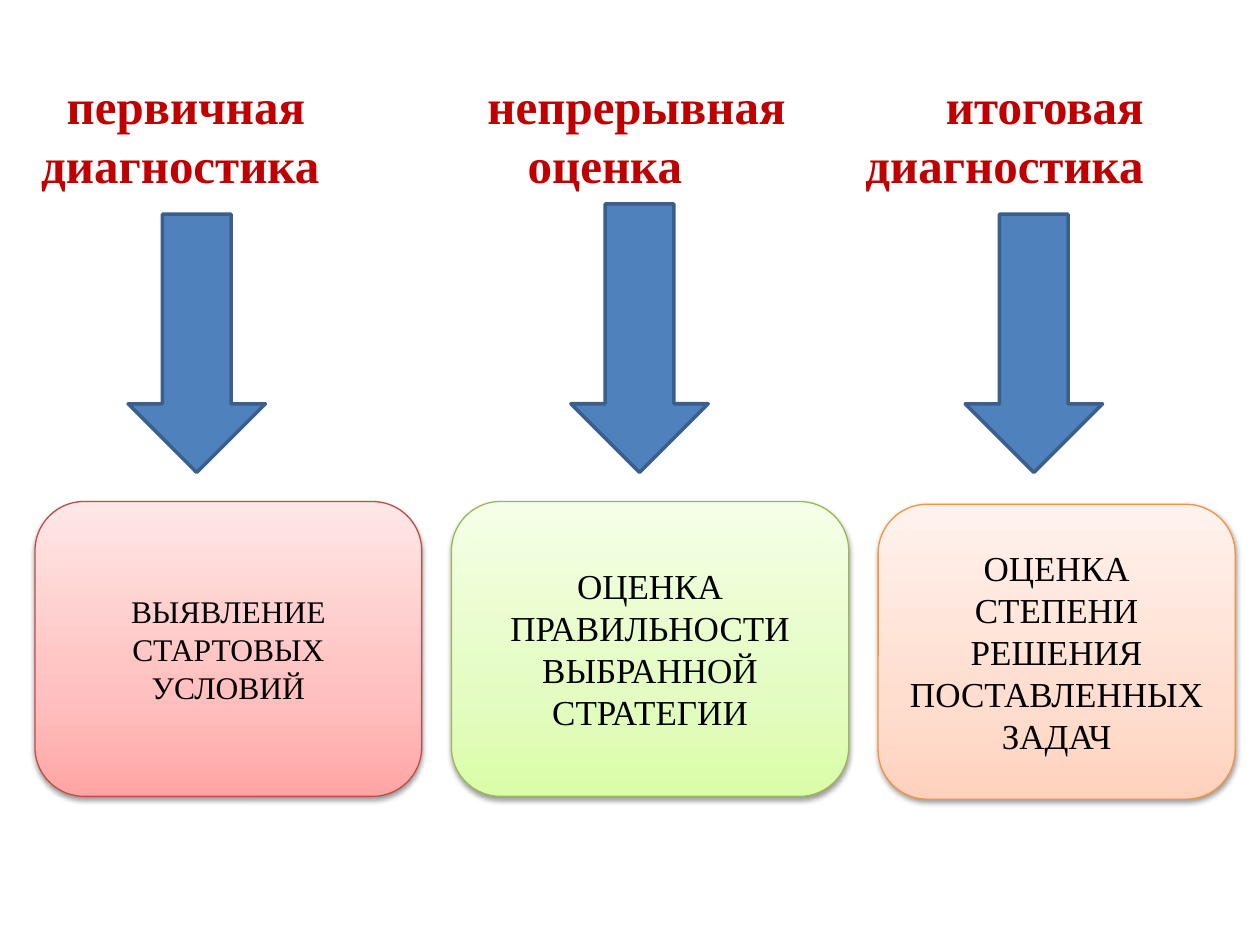
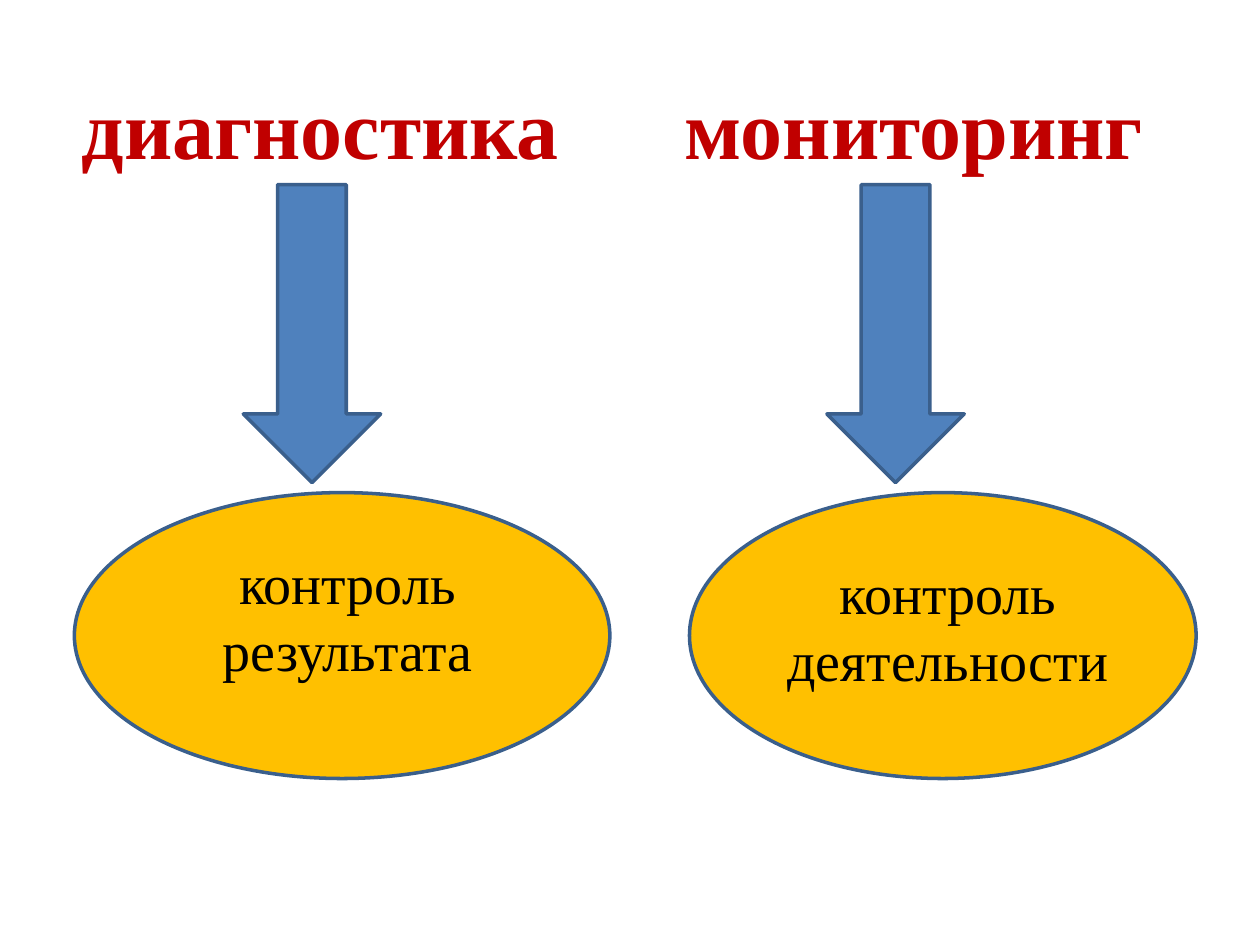
"""Build two slides that compare diagnostics, ongoing assessment and monitoring."""
from dataclasses import dataclass

import pptx
import pptx.dml.color
import pptx.enum.shapes
import pptx.enum.text
import pptx.oxml.ns
import pptx.presentation
import pptx.shapes.autoshape
import pptx.slide
import pptx.text.text
import pptx.util
from lxml import etree

Pt = pptx.util.Pt
Preset = pptx.enum.shapes.MSO_SHAPE
CENTER = pptx.enum.text.PP_ALIGN.CENTER
qn = pptx.oxml.ns.qn

FONT = "Times New Roman"
COLORS = {
    "heading": "C00000",
    "text": "000000",
    "arrow": "4F81BD",
    "outline": "3A5F8C",
    "ellipse": "FFC000",
    "red_line": "BF4C48",
    "green_line": "98B955",
    "orange_line": "F69240",
    "shadow": "000000",
}
GRADIENTS = {
    "red": ("FFA6A5", "FFC0BF", "FFE7E7"),
    "green": ("DAFDA7", "E4FCC2", "F5FFE7"),
    "orange": ("FFD2BD", "FFDED0", "FFF2ED"),
}
GRADIENT_STOPS = (0, 35, 100)
ARROW_WIDTH = 78.5


@dataclass(frozen=True)
class Frame:
    left: float
    top: float
    width: float
    height: float

    def lengths(self) -> tuple[pptx.util.Length, ...]:
        return Pt(self.left), Pt(self.top), Pt(self.width), Pt(self.height)


@dataclass(frozen=True)
class HeadingLine:
    words: tuple[str, ...]
    starts: tuple[float, ...]


@dataclass(frozen=True)
class Arrow:
    left: float
    top: float
    bottom: float


@dataclass(frozen=True)
class Card:
    frame: Frame
    color: str
    size: float
    text: str


@dataclass(frozen=True)
class Oval:
    frame: Frame
    label_frame: Frame
    text: str


HEADING_FRAMES = (Frame(16.5, 39.6, 689, 75), Frame(39.6, 39.6, 652, 65.5))
STAGE_HEADINGS = (
    HeadingLine(("первичная", "непрерывная", "итоговая"), (14.5, 255, 517)),
    HeadingLine(("диагностика", "оценка", "диагностика"), (0, 278, 471)),
)
CONTROL_HEADINGS = (HeadingLine(("диагностика", "мониторинг"), (0, 344.5)),)
STAGE_ARROWS = (Arrow(73.2, 122.4, 270), Arrow(551.5, 122.4, 270), Arrow(326.2, 116.6, 270))
CONTROL_ARROWS = (Arrow(139, 105.5, 275.8), Arrow(472.5, 105.5, 275.8))
CARDS = (
    Card(Frame(20, 286.6, 221, 168.5), "red", 18, "ВЫЯВЛЕНИЕ СТАРТОВЫХ УСЛОВИЙ"),
    Card(Frame(258, 286.6, 227, 168.5), "green", 20, "ОЦЕНКА ПРАВИЛЬНОСТИ ВЫБРАННОЙ СТРАТЕГИИ"),
    Card(Frame(501.8, 288.2, 204, 168.5), "orange", 20, "ОЦЕНКА СТЕПЕНИ РЕШЕНИЯ ПОСТАВЛЕННЫХ ЗАДАЧ"),
)
OVALS = (
    Oval(Frame(42.5, 281.5, 306, 163.4), Frame(65.5, 309.6, 266.4, 85), "контроль результата"),
    Oval(Frame(394, 281.5, 289.5, 163.4), Frame(422.6, 315.4, 238.3, 85), "контроль деятельности"),
)


def rgb(name: str) -> pptx.dml.color.RGBColor:
    return pptx.dml.color.RGBColor.from_string(COLORS[name])


def format_runs(paragraph: pptx.text.text._Paragraph, size: float, color: str, bold: bool = False) -> None:
    for run in paragraph.runs:
        run.font.name = FONT
        run.font.size = Pt(size)
        run.font.bold = bold
        run.font.color.rgb = rgb(color)


def set_centered_text(text_frame: pptx.text.text.TextFrame, text: str, size: float) -> None:
    text_frame.word_wrap = True
    text_frame.text = text
    paragraph = text_frame.paragraphs[0]
    paragraph.alignment = CENTER
    format_runs(paragraph, size, "text")


def add_outlined_shape(
    slide: pptx.slide.Slide, preset: Preset, frame: Frame, line_color: str, line_width: float
) -> pptx.shapes.autoshape.Shape:
    shape = slide.shapes.add_shape(preset, *frame.lengths())
    shape.shadow.inherit = False
    shape.line.color.rgb = rgb(line_color)
    shape.line.width = Pt(line_width)
    return shape


def add_solid_shape(slide: pptx.slide.Slide, preset: Preset, frame: Frame, fill_color: str) -> None:
    shape = add_outlined_shape(slide, preset, frame, "outline", 2)
    shape.fill.solid()
    shape.fill.fore_color.rgb = rgb(fill_color)


def add_heading(slide: pptx.slide.Slide, frame: Frame, lines: tuple[HeadingLine, ...], size: float) -> None:
    text_frame = slide.shapes.add_textbox(*frame.lengths()).text_frame
    text_frame.word_wrap = True
    for index, line in enumerate(lines):
        paragraph = text_frame.add_paragraph() if index else text_frame.paragraphs[0]
        paragraph.text = "".join(
            ("\t" if start else "") + word for word, start in zip(line.words, line.starts)
        )
        format_runs(paragraph, size, "heading", bold=True)
        tab_list = etree.SubElement(paragraph._p.get_or_add_pPr(), qn("a:tabLst"))
        for start in filter(None, line.starts):
            etree.SubElement(tab_list, qn("a:tab"), pos=str(Pt(start)), algn="l")


def add_arrow(slide: pptx.slide.Slide, arrow: Arrow) -> None:
    frame = Frame(arrow.left, arrow.top, ARROW_WIDTH, arrow.bottom - arrow.top)
    add_solid_shape(slide, Preset.DOWN_ARROW, frame, "arrow")


def fill_gradient(shape: pptx.shapes.autoshape.Shape, colors: tuple[str, ...]) -> None:
    shape.fill.gradient()
    shape.fill.gradient_angle = 90
    stop_list = shape._element.spPr.find(".//" + qn("a:gsLst"))
    for old_stop in list(stop_list):
        stop_list.remove(old_stop)
    for position, color in zip(GRADIENT_STOPS, colors):
        stop = etree.SubElement(stop_list, qn("a:gs"), pos=str(position * 1000))
        etree.SubElement(stop, qn("a:srgbClr"), val=color)


def add_soft_shadow(shape: pptx.shapes.autoshape.Shape) -> None:
    effects = shape._element.spPr.find(qn("a:effectLst"))
    shadow = etree.SubElement(
        effects, qn("a:outerShdw"), blurRad=str(Pt(3.1)), dist=str(Pt(1.6)), dir="5400000", rotWithShape="0"
    )
    color = etree.SubElement(shadow, qn("a:srgbClr"), val=COLORS["shadow"])
    etree.SubElement(color, qn("a:alpha"), val="38000")


def add_card(slide: pptx.slide.Slide, card: Card) -> None:
    shape = add_outlined_shape(
        slide, Preset.FLOWCHART_ALTERNATE_PROCESS, card.frame, f"{card.color}_line", 0.75
    )
    fill_gradient(shape, GRADIENTS[card.color])
    add_soft_shadow(shape)
    shape.text_frame.vertical_anchor = pptx.enum.text.MSO_ANCHOR.MIDDLE
    set_centered_text(shape.text_frame, card.text, card.size)


def add_oval(slide: pptx.slide.Slide, oval: Oval) -> None:
    add_solid_shape(slide, Preset.OVAL, oval.frame, "ellipse")
    label = slide.shapes.add_textbox(*oval.label_frame.lengths())
    set_centered_text(label.text_frame, oval.text, 32)


def add_slide(
    presentation: pptx.presentation.Presentation,
    frame: Frame,
    headings: tuple[HeadingLine, ...],
    size: float,
    arrows: tuple[Arrow, ...],
) -> pptx.slide.Slide:
    slide = presentation.slides.add_slide(presentation.slide_layouts[6])
    add_heading(slide, frame, headings, size)
    for arrow in arrows:
        add_arrow(slide, arrow)
    return slide


def main() -> None:
    presentation = pptx.Presentation()
    presentation.slide_width = Pt(720)
    presentation.slide_height = Pt(540)

    stages = add_slide(presentation, HEADING_FRAMES[0], STAGE_HEADINGS, 28, STAGE_ARROWS)
    for card in CARDS:
        add_card(stages, card)

    control = add_slide(presentation, HEADING_FRAMES[1], CONTROL_HEADINGS, 48, CONTROL_ARROWS)
    for oval in OVALS:
        add_oval(control, oval)

    presentation.save("out.pptx")


if __name__ == "__main__":
    main()
